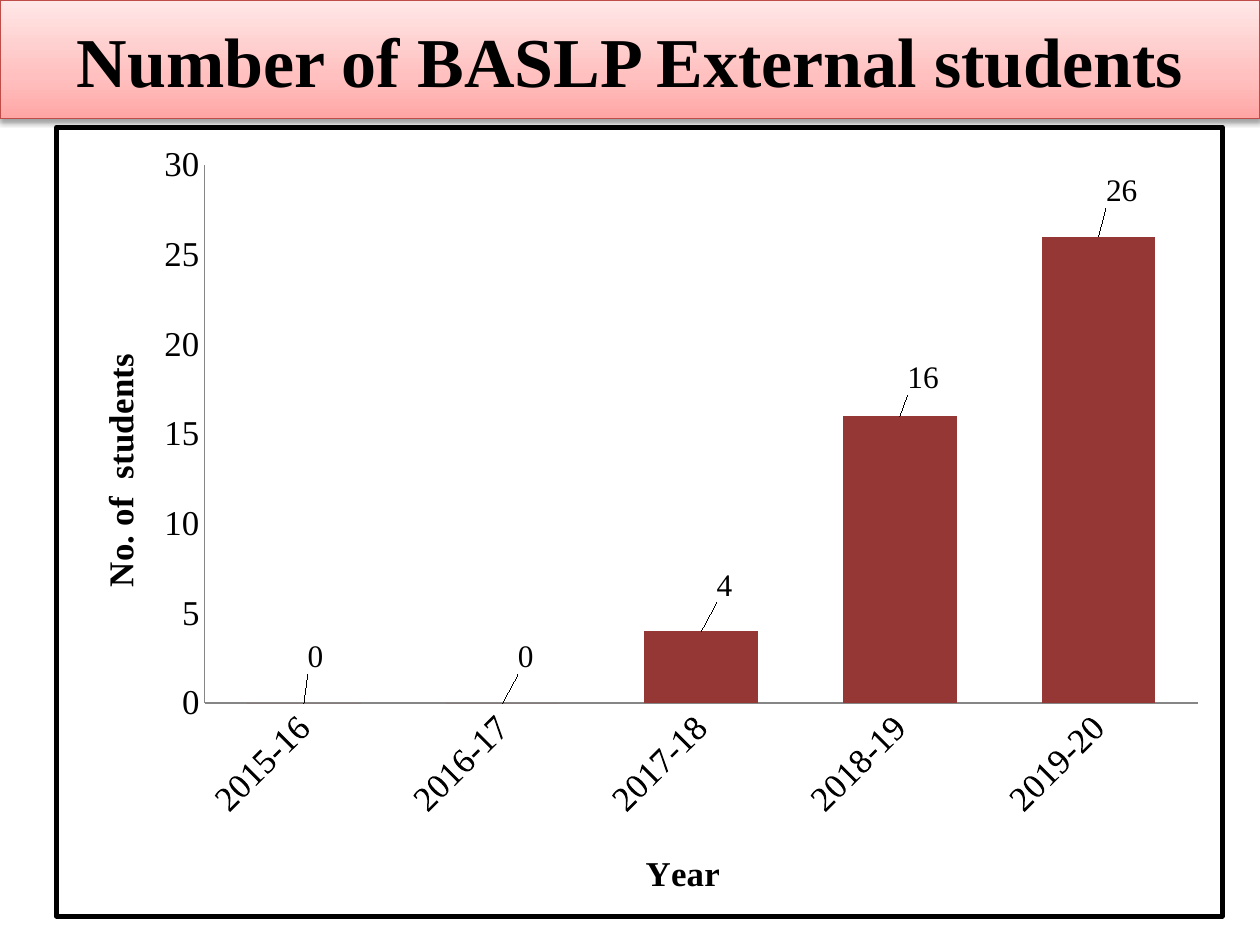
from lxml import etree
from pptx import Presentation
from pptx.chart.data import CategoryChartData
from pptx.dml.color import RGBColor
from pptx.enum.chart import XL_CHART_TYPE, XL_LABEL_POSITION, XL_TICK_MARK
from pptx.enum.text import MSO_ANCHOR, MSO_AUTO_SIZE, PP_ALIGN
from pptx.oxml import parse_xml
from pptx.oxml.ns import nsdecls, qn
from pptx.util import Inches, Pt

YEARS = ["2015-16", "2016-17", "2017-18", "2018-19", "2019-20"]
COUNTS = [0, 0, 4, 16, 26]
SHIFTS = [(0.01, -0.03), (0.02, -0.03), (0.02, -0.03), (0.02, -0.02), (0.02, -0.03)]


def color(text):
    return RGBColor.from_string(text)


def place(parent, index, **parts):
    """Give a chart part a manual layout as fractions of the chart."""
    for old in parent.findall(qn("c:layout")):
        parent.remove(old)
    layout = etree.Element(qn("c:layout"))
    manual = etree.SubElement(layout, qn("c:manualLayout"))
    for name, value in parts.items():
        etree.SubElement(manual, qn("c:" + name)).set("val", str(value))
    parent.insert(index, layout)


class Deck:
    face = "Times New Roman"
    ink = "000000"
    bar = "953735"
    axis = "868686"

    def __init__(self):
        self.prs = Presentation()
        self.prs.slide_width, self.prs.slide_height = Inches(10), Inches(7.5)
        self.slide = self.prs.slides.add_slide(self.prs.slide_layouts[5])

    def style(self, font, size, bold=False):
        font.name, font.size, font.bold = self.face, Pt(size), bold
        font.color.rgb = color(self.ink)

    def title(self, text, left, top, width, height):
        shape = self.slide.shapes.title
        shape.left, shape.top = Inches(left), Inches(top)
        shape.width, shape.height = Inches(width), Inches(height)
        frame = shape.text_frame
        frame.text = text
        frame.word_wrap = True
        frame.auto_size = MSO_AUTO_SIZE.NONE
        frame.vertical_anchor = MSO_ANCHOR.MIDDLE
        para = frame.paragraphs[0]
        para.alignment = PP_ALIGN.CENTER
        self.style(para.font, 40, True)
        shape.line.color.rgb = color("BF4C48")
        shape.line.width = Pt(0.75)
        self.shade(shape, [(0, "FFA6A5"), (35, "FFC0BF"), (100, "FFE7E7")])

    def shade(self, shape, stops):
        """Add an upward gradient and a soft shadow below."""
        marks = "".join(
            f'<a:gs pos="{pos * 1000}"><a:srgbClr val="{tone}"/></a:gs>'
            for pos, tone in stops)
        fill = parse_xml(
            f'<a:gradFill {nsdecls("a")} rotWithShape="1"><a:gsLst>{marks}</a:gsLst>'
            '<a:lin ang="16200000" scaled="1"/></a:gradFill>')
        props = shape._element.spPr
        props.find(qn("a:ln")).addprevious(fill)
        props.append(parse_xml(
            f'<a:effectLst {nsdecls("a")}><a:outerShdw blurRad="{Pt(3.1)}" '
            f'dist="{Pt(1.6)}" dir="5400000" rotWithShape="0"><a:srgbClr val="000000">'
            '<a:alpha val="38000"/></a:srgbClr></a:outerShdw></a:effectLst>'))

    def chart(self, left, top, width, height):
        data = CategoryChartData()
        data.categories = YEARS
        data.add_series("Series 1", COUNTS)
        chart = self.slide.shapes.add_chart(
            XL_CHART_TYPE.COLUMN_CLUSTERED, Inches(left), Inches(top),
            Inches(width), Inches(height), data).chart
        chart.has_title = chart.has_legend = False
        self.style(chart.font, 12)
        self.border(chart, 2.75)
        place(chart._chartSpace.chart.plotArea, 0, layoutTarget="inner",
              xMode="edge", yMode="edge", x=0.127, y=0.048, w=0.852, h=0.682)
        self.scale(chart.category_axis, "Year", 0.5, 0.91)
        self.scale(chart.value_axis, "No. of  students", 0.03, 0.28)
        years = chart.category_axis._element.find(qn("c:txPr"))
        years.find(qn("a:bodyPr")).set("rot", "-2700000")
        counts = chart.value_axis
        counts.minimum_scale, counts.maximum_scale = 0, 30
        counts.major_unit = 5
        self.bars(chart.plots[0])

    def border(self, chart, width):
        chart._chartSpace.find(qn("c:txPr")).addprevious(parse_xml(
            f'<c:spPr {nsdecls("c", "a")}><a:noFill/><a:ln w="{Pt(width)}"><a:solidFill>'
            f'<a:srgbClr val="{self.ink}"/></a:solidFill></a:ln></c:spPr>'))

    def scale(self, axis, text, x, y):
        """Format an axis and put its title at x, y."""
        axis.has_major_gridlines = False
        axis.major_tick_mark = axis.minor_tick_mark = XL_TICK_MARK.NONE
        axis.format.line.color.rgb = color(self.axis)
        self.style(axis.tick_labels.font, 20)
        title = axis.axis_title
        title.text_frame.text = text
        self.style(title.text_frame.paragraphs[0].font, 20, True)
        place(title._element, 1, xMode="edge", yMode="edge", x=x, y=y)

    def bars(self, plot):
        plot.gap_width = 75
        plot.vary_by_categories = False
        series = plot.series[0]
        series.format.fill.solid()
        series.format.fill.fore_color.rgb = color(self.bar)
        for i in range(len(COUNTS)):
            label = series.points[i].data_label
            self.style(label.font, 18)
            label.position = XL_LABEL_POSITION.OUTSIDE_END
        for mark, (x, y) in zip(series._element.iter(qn("c:dLbl")), SHIFTS):
            place(mark, 1, x=x, y=y)
        labels = series.data_labels
        labels.show_value = True
        self.style(labels.font, 18)


def main():
    deck = Deck()
    deck.title("Number of BASLP External students", 0, 0, 10, 0.94)
    deck.chart(0.43, 0.99, 9.29, 6.3)
    deck.prs.save("out.pptx")


if __name__ == "__main__":
    main()
